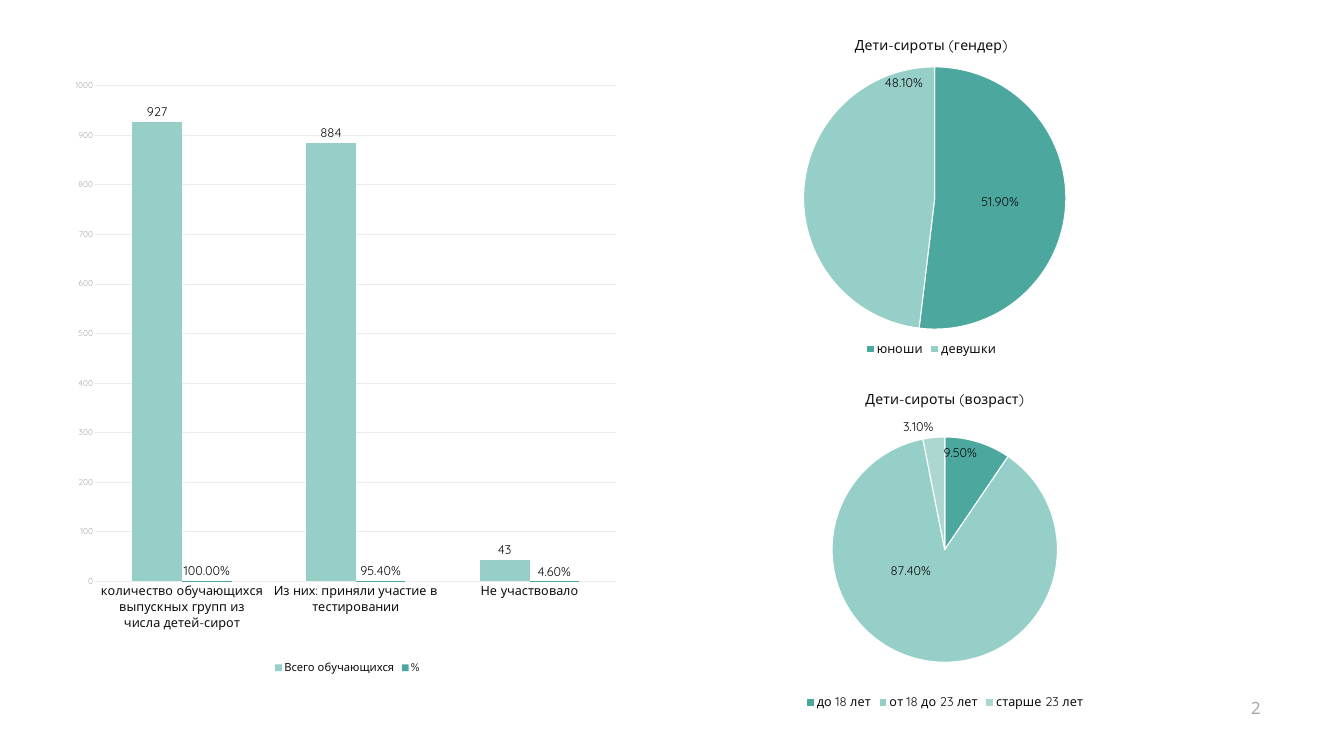
from dataclasses import dataclass
from typing import NamedTuple

from lxml.etree import SubElement
from pptx import Presentation
from pptx.chart.data import CategoryChartData
from pptx.dml.color import RGBColor
from pptx.enum.chart import (
    XL_CHART_TYPE as ChartKind,
    XL_LABEL_POSITION as LabelSpot,
    XL_LEGEND_POSITION as LegendSpot,
    XL_TICK_MARK as Tick,
)
from pptx.enum.text import MSO_ANCHOR as Anchor, PP_ALIGN as Align
from pptx.oxml import parse_xml
from pptx.oxml.ns import nsdecls, qn
from pptx.util import Inches, Pt

WIDTH, HEIGHT = Inches(26.66), Inches(15)
TEAL, MINT, PALE = "4CA89E", "96CFC7", "ACD7D1"
INK, GREY, WHITE = "0D0D0D", "7F7F7F", "FFFFFF"
CHART_FONT, PAGE_FONT = "Quicksand", "Noto Sans"
PERCENT = "0.00%"


class Area(NamedTuple):
    """A place on the slide, in percent of its width and height."""
    left: float
    top: float
    width: float
    height: float

    def emu(self) -> tuple[int, ...]:
        sides = (WIDTH, HEIGHT, WIDTH, HEIGHT)
        return tuple(int(share * side / 100) for share, side in zip(self, sides))


class Plot(NamedTuple):
    """The inner plot, in shares of its chart."""
    x: float
    y: float
    w: float
    h: float


class Slice(NamedTuple):
    name: str
    share: float
    color: str
    spot: LabelSpot
    shift: tuple[float, float] | None = None


@dataclass
class Pie:
    title: str
    area: Area
    plot: Plot
    slices: list[Slice]


class Bars(NamedTuple):
    name: str
    values: tuple[float, ...]
    color: str
    number_format: str


GROUPS = (
    "количество обучающихся выпускных групп из числа детей-сирот",
    "Из них: приняли участие в тестировании",
    "Не участвовало",
)
TESTING = [
    Bars("Всего обучающихся", (927, 884, 43), MINT, "General"),
    Bars("%", (1, 0.954, 0.046), TEAL, PERCENT),
]
PIES = [
    Pie("Дети-сироты (гендер)", Area(42.84, 3.07, 52.89, 44.47), Plot(0.32, 0.13, 0.37, 0.78), [
        Slice("юноши", 0.519, TEAL, LabelSpot.CENTER),
        Slice("девушки", 0.481, MINT, LabelSpot.INSIDE_END, (0.11, -0.32)),
    ]),
    Pie("Дети-сироты (возраст)", Area(42.05, 49.8, 56.49, 44.47), Plot(0.35, 0.18, 0.3, 0.67), [
        Slice("до 18 лет", 0.095, TEAL, LabelSpot.INSIDE_END),
        Slice("от 18 до 23 лет", 0.874, MINT, LabelSpot.CENTER, (-0.03, -0.1)),
        Slice("старше 23 лет", 0.031, PALE, LabelSpot.OUTSIDE_END),
    ]),
]


def rgb(color: str) -> RGBColor:
    return RGBColor.from_string(color)


def style(font, size: float, color: str = INK, name: str = CHART_FONT) -> None:
    font.size, font.name, font.bold = Pt(size), name, False
    font.color.rgb = rgb(color)


def paint(part, color: str) -> None:
    part.format.fill.solid()
    part.format.fill.fore_color.rgb = rgb(color)


def manual_layout(**settings):
    layout = parse_xml(f"<c:layout {nsdecls('c')}/>")
    manual = SubElement(layout, qn("c:manualLayout"))
    for tag, value in settings.items():
        SubElement(manual, qn(f"c:{tag}")).set("val", str(value))
    return layout


def add_chart(slide, kind: ChartKind, area: Area, data, plot: Plot, legend_size: float):
    chart = slide.shapes.add_chart(kind, *area.emu(), data).chart
    style(chart.font, 10, GREY)
    chart.has_legend = True
    chart.legend.position = LegendSpot.BOTTOM
    chart.legend.include_in_layout = False
    style(chart.legend.font, legend_size)
    # Fixed inner plot
    plot_area = chart.element.find(f".//{qn('c:plotArea')}")
    for automatic in plot_area.findall(qn("c:layout")):
        plot_area.remove(automatic)
    plot_area.insert(0, manual_layout(
        layoutTarget="inner", xMode="edge", yMode="edge", **plot._asdict()))
    return chart


def show_labels(labels, number_format: str) -> None:
    labels.show_value = True
    labels.number_format, labels.number_format_is_linked = number_format, False
    style(labels.font, 18)


def add_testing_bars(slide) -> None:
    data = CategoryChartData()
    data.categories = GROUPS
    for bars in TESTING:
        data.add_series(bars.name, bars.values, bars.number_format)
    chart = add_chart(slide, ChartKind.COLUMN_CLUSTERED, Area(4.99, 10.53, 41.71, 79),
                      data, Plot(0.05, 0.01, 0.93, 0.83), 16)
    chart.has_title = False
    columns = chart.plots[0]
    columns.gap_width, columns.overlap, columns.vary_by_categories = 150, 0, False
    for bars, series in zip(TESTING, columns.series):
        paint(series, bars.color)
        show_labels(series.data_labels, bars.number_format)
        series.data_labels.position = LabelSpot.OUTSIDE_END

    # Axes and gridlines
    counts = chart.value_axis
    for axis, size, color in ((chart.category_axis, 18, INK), (counts, 12, "ACACAC")):
        axis.major_tick_mark = axis.minor_tick_mark = Tick.NONE
        axis.format.line.fill.background()
        style(axis.tick_labels.font, size, color)
    counts.minimum_scale, counts.maximum_scale, counts.major_unit = 0, 1000, 100
    grid = counts.major_gridlines.format.line
    grid.color.rgb, grid.width = rgb("ECECEC"), Pt(0.75)


def add_pie(slide, pie: Pie) -> None:
    data = CategoryChartData(number_format=PERCENT)
    data.categories = [part.name for part in pie.slices]
    data.add_series(pie.title, [part.share for part in pie.slices])
    chart = add_chart(slide, ChartKind.PIE, pie.area, data, pie.plot, 18)
    chart.has_title = True
    chart.chart_title.include_in_layout = False
    heading = chart.chart_title.text_frame
    heading.text = pie.title
    style(heading.paragraphs[0].runs[0].font, 20)
    series = chart.plots[0].series[0]
    show_labels(series.data_labels, PERCENT)
    for index, part in enumerate(pie.slices):
        point = series.points[index]
        paint(point, part.color)
        point.format.line.color.rgb, point.format.line.width = rgb(WHITE), Pt(1.5)
        style(point.data_label.font, 18)
        point.data_label.position = part.spot
        # Number format and shift of a single label
        label = series.data_labels._element.findall(qn("c:dLbl"))[index]
        label.insert(1, parse_xml(
            f'<c:numFmt {nsdecls("c")} formatCode="{PERCENT}" sourceLinked="0"/>'))
        if part.shift:
            label.insert(1, manual_layout(x=part.shift[0], y=part.shift[1]))


def add_text(slide, text: str, area: Area, *, size: float, color: str, font: str,
             align: Align, anchor: Anchor) -> None:
    frame = slide.shapes.add_textbox(*area.emu()).text_frame
    frame.word_wrap, frame.vertical_anchor = False, anchor
    paragraph = frame.paragraphs[0]
    paragraph.alignment = align
    run = paragraph.add_run()
    run.text = text
    style(run.font, size, color, font)


def main() -> None:
    deck = Presentation()
    deck.slide_width, deck.slide_height = WIDTH, HEIGHT
    slide = deck.slides.add_slide(deck.slide_layouts.get_by_name("Blank"))
    # Page number
    add_text(slide, "2", Area(91.82, 91.93, 2.36, 3.33), size=24, color="A6A6A6",
             font=PAGE_FONT, align=Align.RIGHT, anchor=Anchor.BOTTOM)
    add_testing_bars(slide)
    for pie in PIES:
        add_pie(slide, pie)
    deck.save("out.pptx")


if __name__ == "__main__":
    main()
